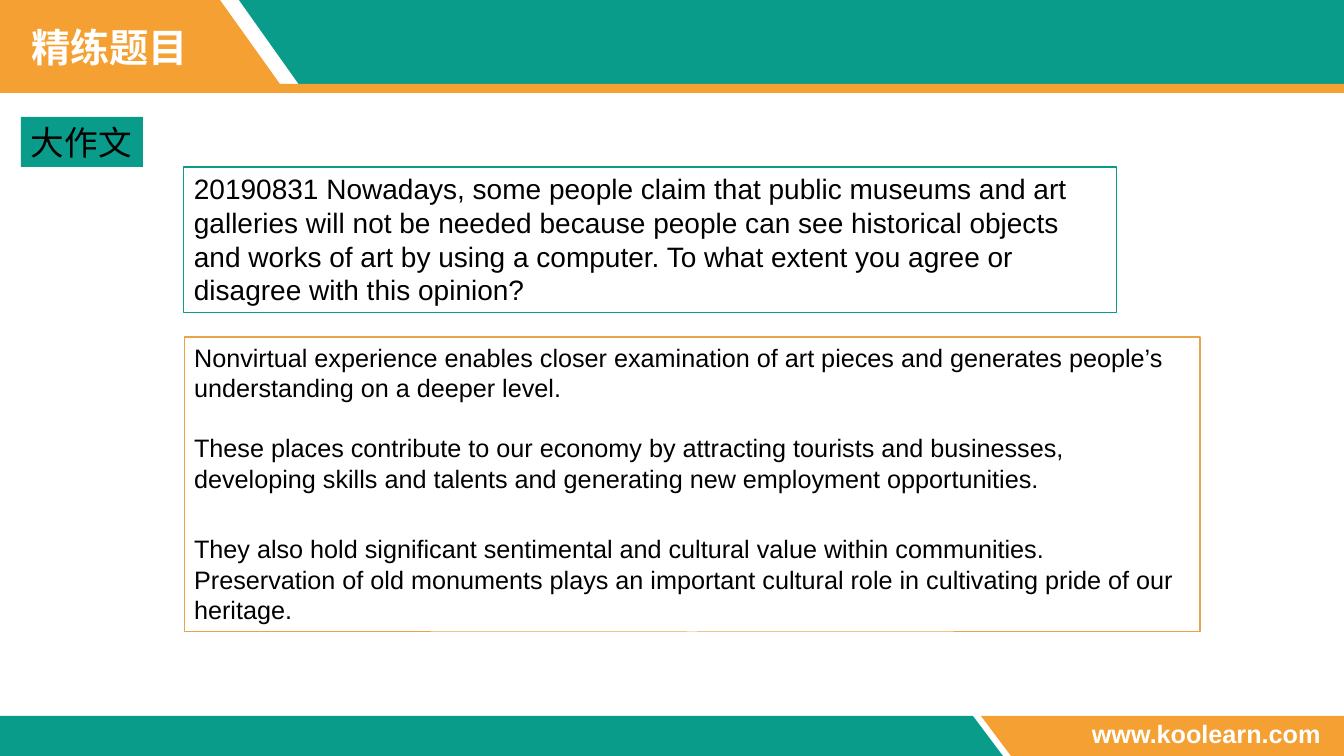
from lxml.etree import SubElement
from pptx import Presentation
from pptx.dml.color import RGBColor
from pptx.enum.shapes import MSO_SHAPE as Shape
from pptx.enum.text import MSO_ANCHOR as Anchor, MSO_AUTO_SIZE as AutoSize, PP_ALIGN as Align
from pptx.oxml.ns import qn
from pptx.util import Emu, Pt

PX = 914400 / 100.8
WIDTH, HEIGHT = 1344, 756
GREEN, ORANGE, PALE_ORANGE = "099C8B", "F4A032", "E8A34B"
BLACK, WHITE = "000000", "FFFFFF"

PROMPT = (
    "20190831 Nowadays, some people claim that public museums and art galleries "
    "will not be needed because people can see historical objects and works of art "
    "by using a computer. To what extent you agree or disagree with this opinion?"
)
# Each argument with the space before it in points
ARGUMENTS = [
    ("Nonvirtual experience enables closer examination of art pieces and generates "
     "people’s understanding on a deeper level.", 0),
    ("These places contribute to our economy by attracting tourists and businesses, "
     "developing skills and talents and generating new employment opportunities.", 21.6),
    ("They also hold significant sentimental and cultural value within communities. "
     "Preservation of old monuments plays an important cultural role in cultivating "
     "pride of our heritage.", 28.8),
]


def px(length):
    return Emu(round(length * PX))


def rgb(color):
    return RGBColor.from_string(color)


class SlideBuilder:
    def __init__(self, slide, font="Arial"):
        self.slide = slide
        self.shapes = slide.shapes
        self.font = font

    def band(self, points, color):
        outline = self.shapes.build_freeform(*points[0], scale=PX)
        outline.add_line_segments(points[1:], close=True)
        band = outline.convert_to_shape()
        band.shadow.inherit = False
        band.fill.solid()
        band.fill.fore_color.rgb = rgb(color)
        band.line.fill.background()

    def place(self, shape, box):
        shape.left, shape.top, shape.width, shape.height = map(px, box)

    def add_text(self, shape, paragraphs, size, color=BLACK, bold=False, font=None,
                 wrap=False, anchor=Anchor.MIDDLE):
        """Fill a shape with (text, space before) paragraphs."""
        frame = shape.text_frame
        frame.auto_size = AutoSize.NONE
        frame.word_wrap = wrap
        frame.vertical_anchor = anchor
        for index, (text, gap) in enumerate(paragraphs):
            paragraph = frame.add_paragraph() if index else frame.paragraphs[0]
            paragraph.alignment = Align.LEFT
            paragraph.space_before = Pt(gap)
            if wrap:
                paragraph.line_spacing = Pt(size * 1.2)
            if shape.is_placeholder:
                properties = paragraph._p.get_or_add_pPr()
                properties.set("marL", "0")
                properties.set("indent", "0")
                SubElement(properties, qn("a:buNone"))
            run = paragraph.add_run()
            run.text = text
            run.font.name = font or self.font
            run.font.size = Pt(size)
            run.font.bold = bold
            run.font.color.rgb = rgb(color)

    def title(self, text, box):
        title = self.shapes.title
        title.element.getparent().append(title.element)  # in front of the bands
        self.place(title, box)
        self.add_text(title, [(text, 0)], 28, WHITE, True, "Montserrat")

    def box(self, text, box, size, fill=None, line=None, **style):
        shape = self.shapes.add_shape(Shape.RECTANGLE, *map(px, box))
        shape.shadow.inherit = False
        if fill:
            shape.fill.solid()
            shape.fill.fore_color.rgb = rgb(fill)
        else:
            shape.fill.background()
        self.border(shape, line)
        self.add_text(shape, [(text, 0)], size, **style)

    def border(self, shape, color):
        if color:
            shape.line.color.rgb = rgb(color)
            shape.line.width = Pt(0.75)
        else:
            shape.line.fill.background()

    def body(self, paragraphs, box, line):
        body = self.slide.placeholders[1]
        self.place(body, box)
        self.border(body, line)
        self.add_text(body, paragraphs, 18, wrap=True, anchor=Anchor.TOP)

    def label(self, text, box, size, **style):
        label = self.shapes.add_textbox(*map(px, box))
        self.add_text(label, [(text, 0)], size, **style)


def main():
    deck = Presentation()
    deck.slide_width, deck.slide_height = px(WIDTH), px(HEIGHT)
    builder = SlideBuilder(deck.slides.add_slide(deck.slide_layouts[1]))

    builder.band([(239, 0), (305, 93), (WIDTH, 93), (WIDTH, 0)], GREEN)
    builder.band([(0, 0), (220, 0), (280, 84), (WIDTH, 84), (WIDTH, 93), (0, 93)], ORANGE)
    builder.band([(0, 716), (973, 716), (1003, HEIGHT), (0, HEIGHT)], GREEN)
    builder.band([(981, 716), (WIDTH, 716), (WIDTH, HEIGHT), (1011, HEIGHT)], ORANGE)
    builder.label("www.koolearn.com", (1082, 713, 251, 40), 18, color=WHITE, bold=True)

    builder.title("精练题目", (21, 18, 178, 58))
    builder.box("大作文", (21, 117, 122, 50), 24, fill=GREEN)
    builder.box(PROMPT, (184, 167, 933, 146), 20, line=GREEN, wrap=True, anchor=Anchor.TOP)
    builder.body(ARGUMENTS, (184, 337, 1016, 295), PALE_ORANGE)

    deck.save("out.pptx")


if __name__ == "__main__":
    main()
